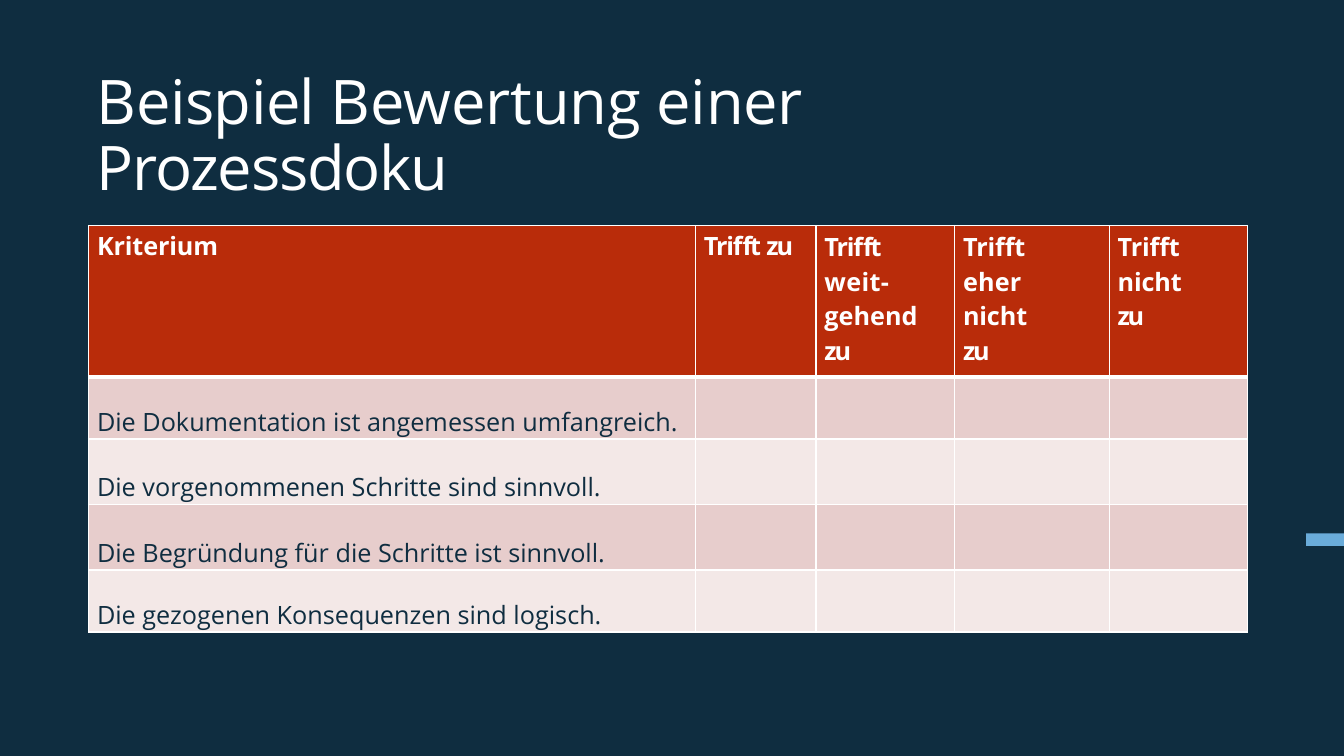
"""Build the slide with the rating table for a process documentation."""
import pptx
import pptx.dml.color
import pptx.enum.shapes
import pptx.enum.text
import pptx.oxml
import pptx.oxml.ns
import pptx.util

Cm = pptx.util.Cm
Pt = pptx.util.Pt

COLORS = {
    "navy": "0F2D40",
    "sky": "6AACDA",
    "white": "FFFFFF",
    "rust": "B92C0A",
    "rose": "E7CDCC",
    "blush": "F3E8E7",
}
TITLE = [("Beispiel ", -0.4), ("Bewertung ", -0.1), ("einer ", -0.3), ("Prozessdoku", -0.9)]
HEADINGS = [
    [[("Kriterium", -0.1)]],
    [[("Trifft ", -0.8), ("zu", -1.4)]],
    [[("Trifft", -0.8)], [("weit-", 0.2)], [("gehend", 0)], [("zu", -1.5)]],
    [[("Trifft", -0.1)], [("eher", 0.1)], [("nicht", -0.1)], [("zu", -1.5)]],
    [[("Trifft", -0.1)], [("nicht", -0.1)], [("zu", -1.5)]],
]
CRITERIA = [
    "Die Dokumentation ist angemessen umfangreich.",
    "Die vorgenommenen Schritte sind sinnvoll.",
    "Die Begründung für die Schritte ist sinnvoll.",
    "Die gezogenen Konsequenzen sind logisch.",
]
COLUMN_WIDTHS = [14.45, 2.87, 3.3, 3.68, 3.3]
ROW_HEIGHTS = [3.6, 1.48, 1.56, 1.56, 1.48]


class SlideBuilder:
    """Holds the style and the current slide."""

    font = "Open Sans"

    def __init__(self, slide):
        self.slide = slide

    def color(self, name):
        return pptx.dml.color.RGBColor.from_string(COLORS[name])

    def paint(self, target, name):
        target.fill.solid()
        target.fill.fore_color.rgb = self.color(name)

    def background(self, name):
        self.paint(self.slide.background, name)

    def bar(self, left, top, width, height, name):
        accent = self.slide.shapes.add_shape(
            pptx.enum.shapes.MSO_SHAPE.RECTANGLE, Cm(left), Cm(top), Cm(width), Cm(height))
        accent.shadow.inherit = False
        self.paint(accent, name)
        accent.line.fill.background()

    def add_lines(self, frame, lines, size, color, bold=False, spacing=1.0):
        paragraph = frame.paragraphs[0]
        paragraph.alignment = pptx.enum.text.PP_ALIGN.LEFT
        paragraph.line_spacing = spacing
        for number, line in enumerate(lines):
            if number:
                paragraph.add_line_break()
            for words, tracking in line:
                run = paragraph.add_run()
                run.text = words
                run.font.name = self.font
                run.font.size = Pt(size)
                run.font.bold = bold
                run.font.color.rgb = self.color(color)
                run._r.get_or_add_rPr().set("spc", str(round(tracking * 100)))

    def title(self, left, top, width, height, runs):
        frame = self.slide.shapes.add_textbox(
            Cm(left), Cm(top), Cm(width), Cm(height)).text_frame
        frame.word_wrap = True
        frame.margin_left = frame.margin_right = frame.margin_top = frame.margin_bottom = 0
        self.add_lines(frame, [runs], 41.5, "white", spacing=0.9)

    def borders(self, cell, widths):
        properties = cell._tc.get_or_add_tcPr()
        for place, (side, width) in enumerate(zip("LRTB", widths)):
            properties.insert(place, pptx.oxml.parse_xml(
                f'<a:ln{side} {pptx.oxml.ns.nsdecls("a")} w="{int(Pt(width))}">'
                f'<a:solidFill><a:srgbClr val="{COLORS["white"]}"/></a:solidFill>'
                f'</a:ln{side}>'))

    def table(self, left, top, column_widths, row_heights, headings, criteria):
        grid = self.slide.shapes.add_table(
            len(row_heights), len(column_widths), Cm(left), Cm(top),
            Cm(sum(column_widths)), Cm(sum(row_heights))).table
        grid.first_row = grid.horz_banding = False
        for column, width in zip(grid.columns, column_widths):
            column.width = Cm(width)
        for row_number, height in enumerate(row_heights):
            grid.rows[row_number].height = Cm(height)
            fill = "rust" if row_number == 0 else ("blush", "rose")[row_number % 2]
            edges = (1, 1, 3 if row_number == 1 else 1, 3 if row_number == 0 else 1)
            for cell in grid.rows[row_number].cells:
                self.paint(cell, fill)
                self.borders(cell, edges)
                cell.margin_left = Cm(0.2)
                cell.margin_right = cell.margin_top = cell.margin_bottom = 0
        for cell, lines in zip(grid.rows[0].cells, headings):
            cell.margin_top = Cm(0.08)
            spacing = 1.01 if len(lines) > 1 else 1.0
            self.add_lines(cell.text_frame, lines, 17, "white", bold=True, spacing=spacing)
        for row_number, criterion in enumerate(criteria, start=1):
            cell = grid.cell(row_number, 0)
            cell.vertical_anchor = pptx.enum.text.MSO_ANCHOR.BOTTOM
            self.add_lines(cell.text_frame, [[(criterion, 0)]], 17, "navy")


def main():
    deck = pptx.Presentation()
    deck.slide_width, deck.slide_height = Cm(32), Cm(18)
    builder = SlideBuilder(deck.slides.add_slide(deck.slide_layouts[6]))
    builder.background("navy")
    builder.bar(31.1, 12.7, 0.9, 0.3, "sky")
    builder.title(2.31, 1.7, 22.12, 3.58, TITLE)
    builder.table(2.11, 5.37, COLUMN_WIDTHS, ROW_HEIGHTS, HEADINGS, CRITERIA)
    deck.save("out.pptx")


if __name__ == "__main__":
    main()
